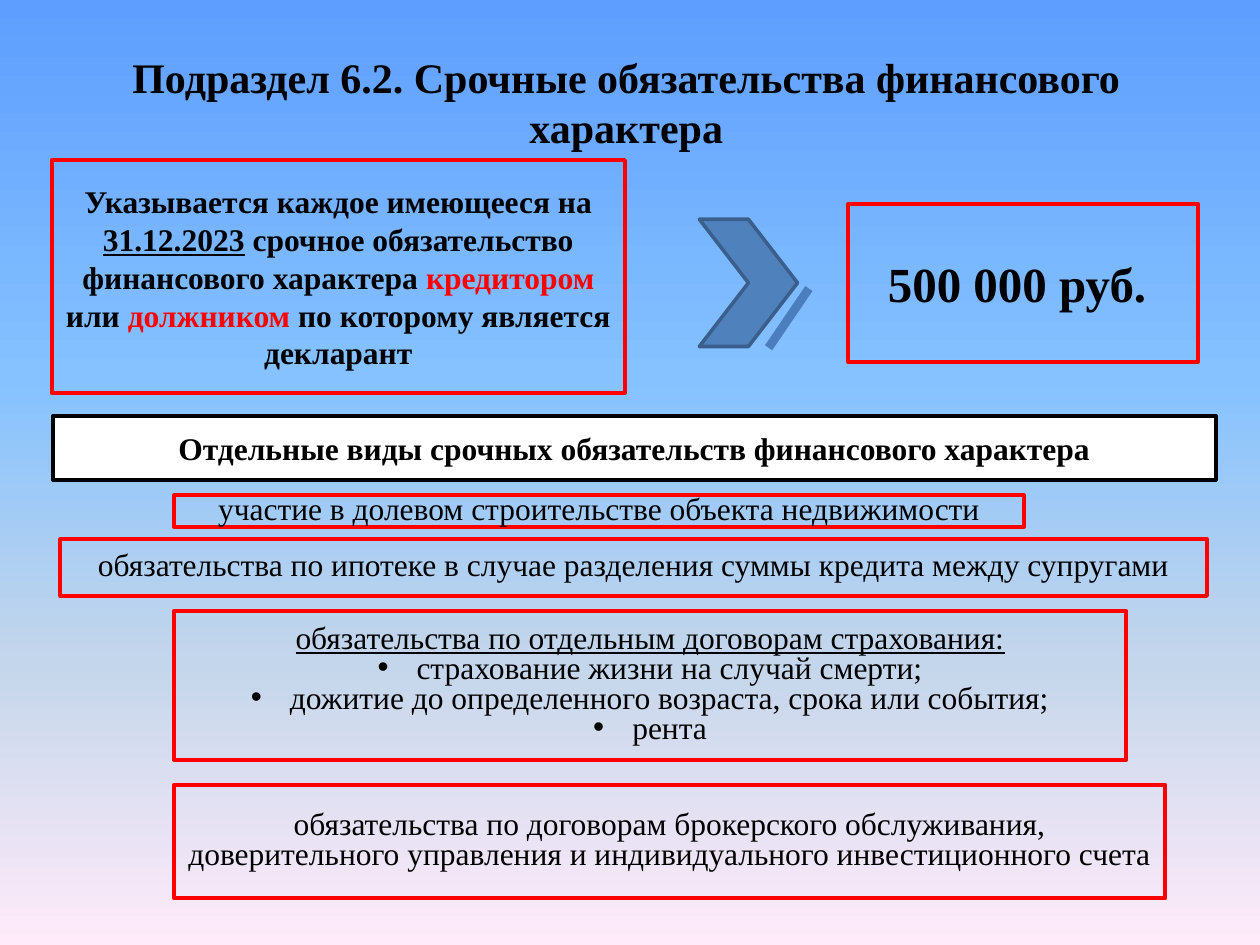
from copy import deepcopy

from pptx import Presentation
from pptx.dml.color import RGBColor
from pptx.enum.shapes import MSO_CONNECTOR as Conn, MSO_SHAPE as Shape
from pptx.enum.text import MSO_ANCHOR as Anchor, PP_ALIGN as Align
from pptx.oxml.ns import qn
from pptx.util import Inches, Pt
from lxml.etree import SubElement

FONT = "Times New Roman"
HEX = {
    "black": "000000", "white": "FFFFFF", "red": "FF0000",
    "blue": "4F81BD", "edge": "3A5F8C", "stroke": "4B7EBC",
}
SKY = [(0, "5E9EFF"), (40, "85C2FF"), (70, "C4D6EB"), (100, "FFEBFA")]


def color(name):
    return RGBColor.from_string(HEX[name])


def set_sky(slide):
    """Vertical gradient behind the whole slide."""
    fill = slide.background.fill
    fill.gradient()
    fill.gradient_angle = 270
    stops = slide.element.find(".//" + qn("a:gsLst"))
    base = deepcopy(stops[0])
    for old in list(stops):
        stops.remove(old)
    for _ in SKY:
        stops.append(deepcopy(base))
    for stop, (pos, tint) in zip(fill.gradient_stops, SKY):
        stop.position = pos / 100
        stop.color.rgb = RGBColor.from_string(tint)


def add_bullet(para):
    props = para._p.get_or_add_pPr()
    props.set("marL", str(Inches(0.31)))
    props.set("indent", str(-Inches(0.31)))
    SubElement(props, qn("a:buFont")).set("typeface", "Arial")
    SubElement(props, qn("a:buChar")).set("char", "•")


def add_run(para, text, size, bold=False, tint="black", under=False):
    run = para.add_run()
    run.text = text
    font = run.font
    font.name, font.size, font.bold = FONT, Pt(size), bold
    font.underline = under
    font.color.rgb = color(tint)


def add_para(frame, runs, size=18, bold=False, space=None, bullet=False, first=True):
    """Each run is a text and a dict of what sets it apart."""
    para = frame.paragraphs[0] if first else frame.add_paragraph()
    para.alignment = Align.CENTER
    if space:
        para.line_spacing = space
    if bullet:
        add_bullet(para)
    for text, look in runs:
        add_run(para, text, size, bold, **look)


def add_shape(slide, kind, at, line, width, fill=None):
    shape = slide.shapes.add_shape(kind, *map(Inches, at))
    shape.shadow.inherit = False
    if fill:
        shape.fill.solid()
        shape.fill.fore_color.rgb = color(fill)
    else:
        shape.fill.background()
    shape.line.color.rgb = color(line)
    shape.line.width = Pt(width)
    return shape


def add_box(slide, at, line="red", width=2.25, fill=None):
    frame = add_shape(slide, Shape.RECTANGLE, at, line, width, fill).text_frame
    frame.word_wrap = True
    frame.vertical_anchor = Anchor.MIDDLE
    return frame


def add_title(slide, at, text):
    frame = slide.shapes.add_textbox(*map(Inches, at)).text_frame
    frame.word_wrap = True
    add_para(frame, [(text, {})], 24, True)


def add_stroke(slide, start, end):
    line = slide.shapes.add_connector(Conn.STRAIGHT, *map(Inches, start + end))
    line.line.color.rgb = color("stroke")
    line.line.width = Pt(5)
    SubElement(line._element.spPr, qn("a:effectLst"))


def main():
    deck = Presentation()
    deck.slide_width, deck.slide_height = Inches(10), Inches(7.5)
    slide = deck.slides.add_slide(deck.slide_layouts[6])
    set_sky(slide)
    add_title(slide, (0.42, 0.36, 9.1, 0.91),
              "Подраздел 6.2. Срочные обязательства финансового характера")

    # Rule and threshold
    rule = add_box(slide, (0.41, 1.27, 4.55, 1.85))
    add_para(rule, [
        ("Указывается каждое имеющееся на ", {}),
        ("31.12.2023", {"under": True}),
        (" срочное обязательство финансового характера ", {}),
        ("кредитором ", {"tint": "red"}),
        ("или ", {}),
        ("должником", {"tint": "red"}),
        (" по которому является декларант", {}),
    ], bold=True)
    limit = add_box(slide, (6.73, 1.62, 2.78, 1.25))
    add_para(limit, [("500 000 руб. ", {})], 28, True)

    # Arrow between them
    add_shape(slide, Shape.CHEVRON, (5.55, 1.74, 0.78, 1.01), "edge", 2, "blue")
    add_stroke(slide, (6.42, 2.29), (6.1, 2.76))

    # Heading of the list
    head = add_box(slide, (0.42, 3.3, 9.23, 0.51), "black", 2, "white")
    add_para(head, [("Отдельные виды срочных обязательств финансового характера", {})],
             bold=True)

    # Kinds of obligation
    kinds = [
        ((1.38, 3.93, 6.75, 0.25),
         "участие в долевом строительстве объекта недвижимости"),
        ((0.48, 4.28, 9.1, 0.45),
         "обязательства по ипотеке в случае разделения суммы кредита между супругами"),
        ((1.38, 6.23, 7.87, 0.9),
         "обязательства по договорам брокерского обслуживания, "
         "доверительного управления и индивидуального инвестиционного счета"),
    ]
    for at, text in kinds:
        add_para(add_box(slide, at), [(text, {})], space=0.8)

    # Insurance contracts
    cover = add_box(slide, (1.38, 4.85, 7.56, 1.18))
    add_para(cover, [("обязательства по отдельным договорам страхования:",
                      {"under": True})], space=0.8)
    for text in ("страхование жизни на случай смерти;",
                 "дожитие до определенного возраста, срока или события;",
                 "рента"):
        add_para(cover, [(text, {})], space=0.8, bullet=True, first=False)

    deck.save("out.pptx")


if __name__ == "__main__":
    main()
